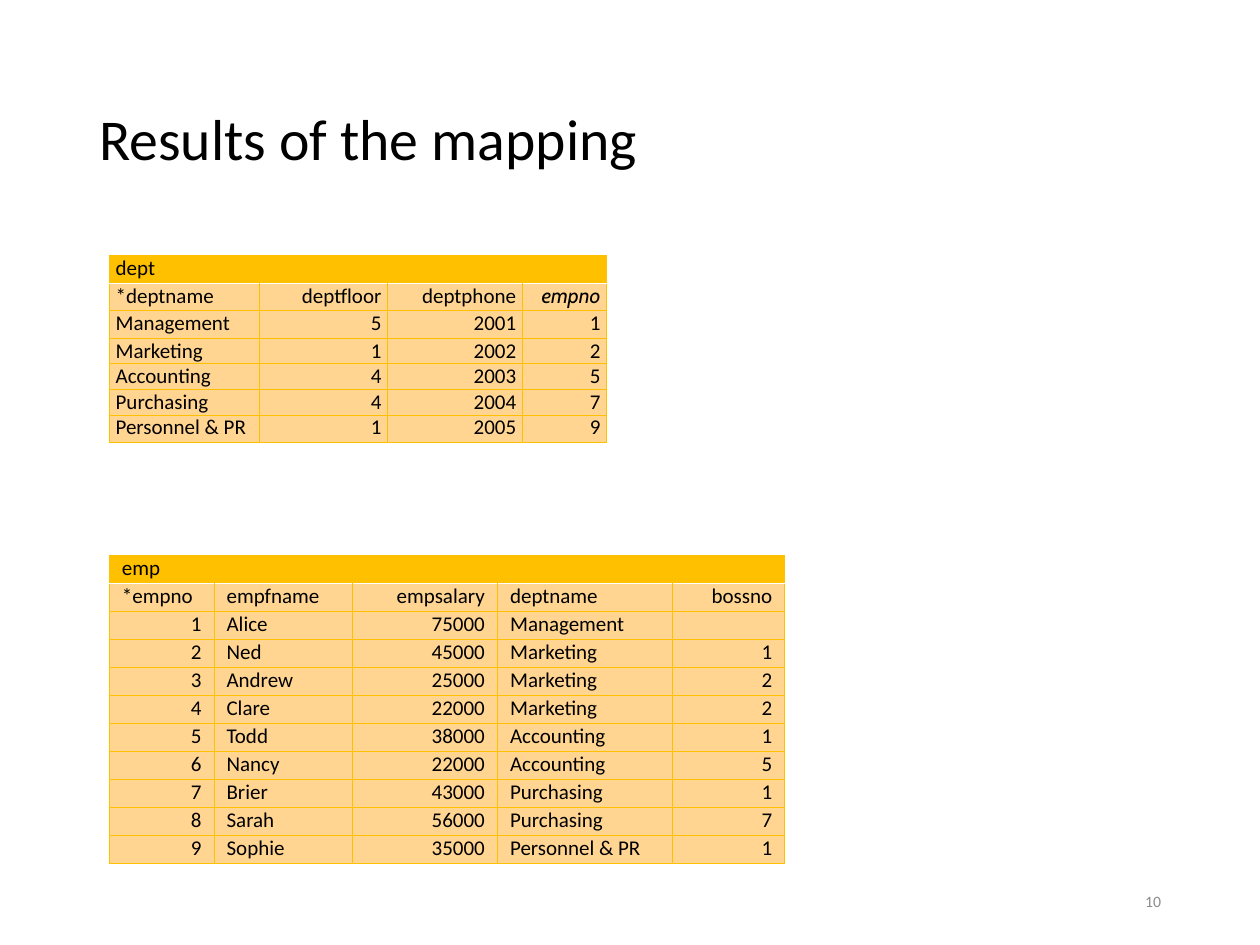
from dataclasses import dataclass

from lxml import etree
from pptx import Presentation
from pptx.dml.color import RGBColor
from pptx.enum import text
from pptx.oxml import ns
from pptx.util import Pt

GOLD = RGBColor(0xFF, 0xC0, 0x00)
SAND = RGBColor(0xFF, 0xD5, 0x91)
WHITE = RGBColor(0xFF, 0xFF, 0xFF)
BLACK = RGBColor(0, 0, 0)
GREY = RGBColor(0x8C, 0x8C, 0x8C)
FONT = "Calibri"
ALIGN = {
    "l": text.PP_ALIGN.LEFT,
    "r": text.PP_ALIGN.RIGHT,
    "j": text.PP_ALIGN.JUSTIFY,
}


@dataclass
class Grid:
    """A relation: a title band, a row of column names, then data rows."""
    name: str
    left: float
    top: float
    widths: list[float]
    heights: list[float]
    inset: float
    head: str  # one alignment letter per column, for the column names
    body: str  # the same for the data rows
    rows: list[tuple[str, ...]]


DEPT = Grid(
    "dept", 62.5, 146.2, [85.7, 73.4, 77, 48.2],
    [15.7] * 3 + [14.65] * 3 + [15.7], 3.6, "lrrr", "lrrr",
    [
        ("*deptname", "deptfloor", "deptphone", "empno"),
        ("Management", "5", "2001", "1"),
        ("Marketing", "1", "2002", "2"),
        ("Accounting", "4", "2003", "5"),
        ("Purchasing", "4", "2004", "7"),
        ("Personnel & PR", "1", "2005", "9"),
    ],
)
EMP = Grid(
    "emp", 62.5, 317.3, [59.8, 79.2, 82.8, 100.1, 64.1],
    [16] * 11, 7.2, "jjrjr", "rjrjr",
    [
        ("*empno", "empfname", "empsalary", "deptname", "bossno"),
        ("1", "Alice", "75000", "Management", ""),
        ("2", "Ned", "45000", "Marketing", "1"),
        ("3", "Andrew", "25000", "Marketing", "2"),
        ("4", "Clare", "22000", "Marketing", "2"),
        ("5", "Todd", "38000", "Accounting", "1"),
        ("6", "Nancy", "22000", "Accounting", "5"),
        ("7", "Brier", "43000", "Purchasing", "1"),
        ("8", "Sarah", "56000", "Purchasing", "7"),
        ("9", "Sophie", "35000", "Personnel & PR", "1"),
    ],
)


def style(para, size: float, color: RGBColor, align: str) -> None:
    para.alignment = ALIGN[align]
    for run in para.runs:
        font = run.font
        font.name, font.size, font.color.rgb = FONT, Pt(size), color


def edge(cell, side: str, color: RGBColor | None, width: float = 0.5) -> None:
    """Draw one cell border; no colour means no line."""
    props = cell._tc.get_or_add_tcPr()
    line = etree.SubElement(props, ns.qn(f"a:ln{side}"), w=str(Pt(width)))
    if color is None:
        etree.SubElement(line, ns.qn("a:noFill"))
    else:
        fill = etree.SubElement(line, ns.qn("a:solidFill"))
        etree.SubElement(fill, ns.qn("a:srgbClr"), val=str(color))


def write(cell, words: str, align: str, inset: float) -> None:
    cell.margin_left = cell.margin_right = Pt(inset)
    cell.margin_top = cell.margin_bottom = 0
    cell.text_frame.text = words
    para = cell.text_frame.paragraphs[0]
    para.space_before = para.space_after = Pt(3)
    style(para, 12, BLACK, align)
    if not words:  # keeps an empty cell from stretching its row
        para._p.get_or_add_endParaRPr().set("sz", "1200")


def draw(slide, grid: Grid) -> object:
    count = len(grid.widths)
    rows = [(grid.name,) + ("",) * (count - 1)] + grid.rows
    table = slide.shapes.add_table(
        len(rows), count, Pt(grid.left), Pt(grid.top),
        Pt(sum(grid.widths)), Pt(sum(grid.heights))).table
    table.horz_banding = False
    table.first_row = False
    for col, width in zip(table.columns, grid.widths):
        col.width = Pt(width)
    for row, height in zip(table.rows, grid.heights):
        row.height = Pt(height)
    for r, words in enumerate(rows):
        aligns = grid.head if r < 2 else grid.body
        for c, word in enumerate(words):
            cell = table.cell(r, c)
            write(cell, word, aligns[c], grid.inset)
            # The title band has no inner lines and a white lower edge
            band = r == 0
            edge(cell, "L", None if band and c > 0 else GOLD)
            edge(cell, "R", None if band and c < count - 1 else GOLD)
            edge(cell, "T", *((WHITE, 1) if r == 1 else (GOLD,)))
            edge(cell, "B", *((WHITE, 1) if band else (GOLD,)))
            cell.fill.solid()
            cell.fill.fore_color.rgb = GOLD if band else SAND
    return table


def main() -> None:
    deck = Presentation()
    deck.slide_width, deck.slide_height = Pt(720), Pt(540)
    slide = deck.slides.add_slide(deck.slide_layouts[5])

    # Title
    title = slide.shapes.title
    title.left, title.top = Pt(49.5), Pt(28.8)
    title.width, title.height = Pt(621), Pt(104.4)
    title.text_frame.text = "Results of the mapping"
    title.text_frame.vertical_anchor = text.MSO_ANCHOR.MIDDLE
    para = title.text_frame.paragraphs[0]
    para.line_spacing = 0.9
    style(para, 33, BLACK, "l")

    # Page number
    page = slide.shapes.add_textbox(Pt(508.5), Pt(500.5), Pt(162), Pt(28.8))
    frame = page.text_frame
    frame.word_wrap = True
    frame.vertical_anchor = text.MSO_ANCHOR.MIDDLE
    frame.text = "10"
    style(frame.paragraphs[0], 9, GREY, "r")

    # Relations; the foreign key of dept is set in italics
    dept = draw(slide, DEPT)
    font = dept.cell(1, 3).text_frame.paragraphs[0].runs[0].font
    font.name, font.italic = "Cabin", True
    draw(slide, EMP)

    deck.save("out.pptx")


if __name__ == "__main__":
    main()
